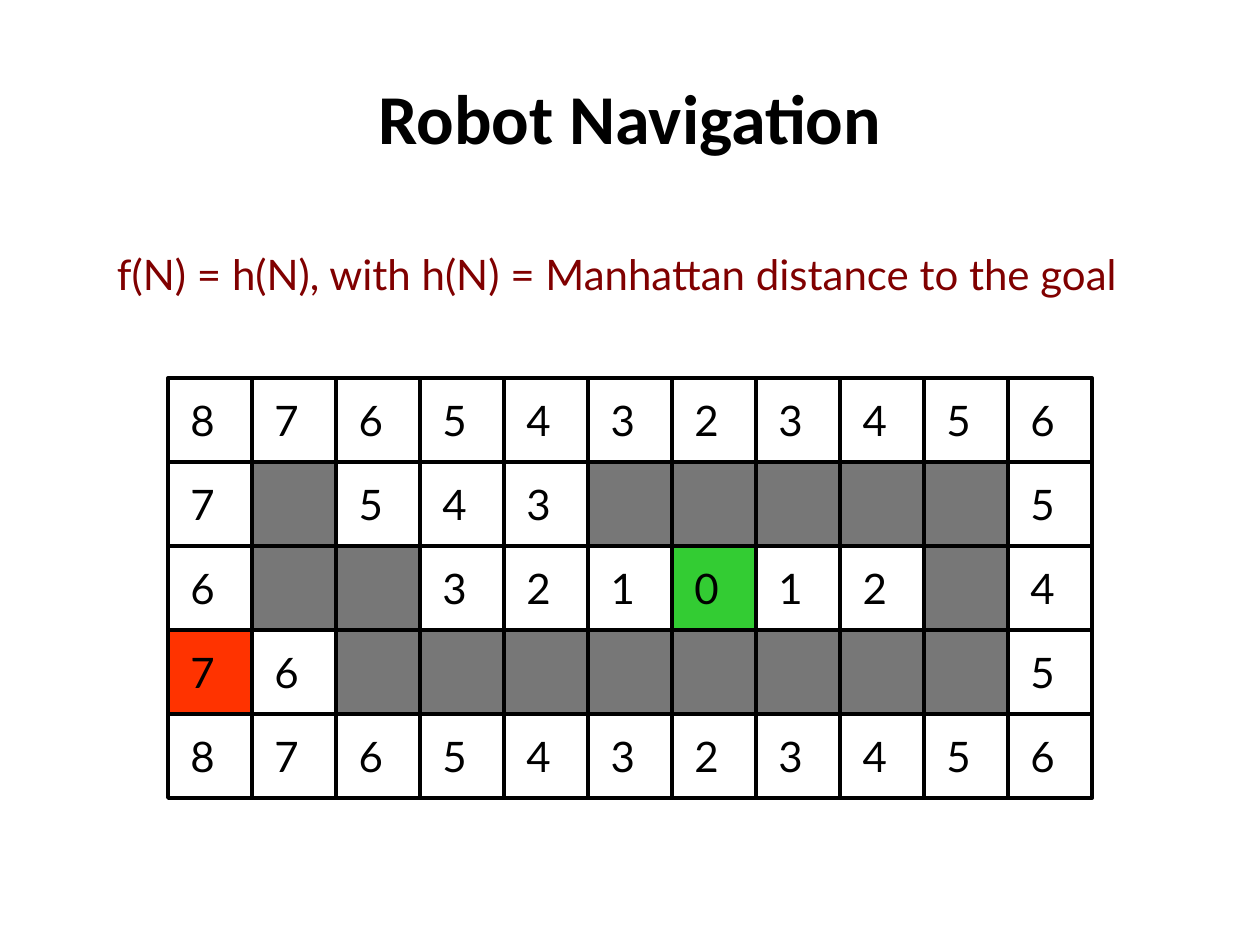
from lxml import etree
from pptx import Presentation
from pptx.dml.color import RGBColor
from pptx.enum.shapes import MSO_CONNECTOR, MSO_SHAPE
from pptx.enum.text import MSO_ANCHOR, MSO_AUTO_SIZE, PP_ALIGN
from pptx.oxml.ns import qn
from pptx.util import Inches, Pt

RECT = MSO_SHAPE.RECTANGLE
LINE = MSO_CONNECTOR.STRAIGHT
MIDDLE = MSO_ANCHOR.MIDDLE
CENTER = PP_ALIGN.CENTER
GROW = MSO_AUTO_SIZE.SHAPE_TO_FIT_TEXT

COLORS = {
    "ink": "000000",
    "rule": "800000",
    "wall": "777777",
    "start": "FF3300",
    "goal": "33CC33",
}
MAZE = [
    "...........",
    ".#...#####.",
    ".##...G..#.",
    "S.########.",
    "...........",
]
FILLS = {"#": "wall", "S": "start", "G": "goal"}


def color(name):
    """Return the named colour."""
    return RGBColor.from_string(COLORS[name])


def style(par, face, size, tint, bold=False):
    """Set the font of a paragraph."""
    font = par.font
    font.name, font.size, font.bold = face, Pt(size), bold
    font.color.rgb = color(tint)


def add_title(slide, text, left, top, width, height):
    """Place the title in its box."""
    title = slide.shapes.title
    title.left, title.top, title.width, title.height = left, top, width, height
    frame = title.text_frame
    frame.text = text
    frame.vertical_anchor = MIDDLE
    par = frame.paragraphs[0]
    par.alignment = CENTER
    style(par, "Calibri", 40, "ink", True)


def add_text(shapes, text, tint, left, top, width, height):
    """Place one line of text that does not wrap."""
    frame = shapes.add_textbox(left, top, width, height).text_frame
    frame.word_wrap = False
    frame.auto_size = GROW
    frame.text = text
    style(frame.paragraphs[0], "Lato", 24, tint)


def add_rect(shapes, tint, left, top, width, height):
    """Place an outlined rectangle, unfilled when it has no tint."""
    rect = shapes.add_shape(RECT, left, top, width, height)
    rect.shadow.inherit = False
    if tint:
        rect.fill.solid()
        rect.fill.fore_color.rgb = color(tint)
    else:
        rect.fill.background()
    rect.line.color.rgb = color("ink")
    rect.line.width = Pt(2.25)


def add_line(shapes, *ends):
    """Place a grid line between two points."""
    line = shapes.add_connector(LINE, *ends)
    line.line.color.rgb = color("ink")
    line.line.width = Pt(2.25)
    etree.SubElement(line._element.spPr, qn("a:effectLst"))


def add_maze(slide, left, top, cell):
    """Place the maze, with the Manhattan distance to the goal in free cells."""
    shapes = slide.shapes.add_group_shape().shapes
    rows, cols = len(MAZE), len(MAZE[0])
    width, height = cols * cell, rows * cell
    add_rect(shapes, None, left, top, width, height)
    for col in range(1, cols):
        x = left + col * cell
        add_line(shapes, x, top, x, top + height)
    for row in range(1, rows):
        y = top + row * cell
        add_line(shapes, left, y, left + width, y)

    cells = [(r, c, mark) for r, marks in enumerate(MAZE) for c, mark in enumerate(marks)]
    goal = next((r, c) for r, c, mark in cells if mark == "G")
    for row, col, mark in cells:
        if mark in FILLS:
            add_rect(shapes, FILLS[mark], left + col * cell, top + row * cell, cell, cell)
    pad = Inches(0.08)
    for row, col, mark in cells:
        if mark != "#":
            steps = abs(row - goal[0]) + abs(col - goal[1])
            add_text(shapes, str(steps), "ink", left + col * cell + pad,
                     top + row * cell + pad, Inches(0.38), Inches(0.5))


def main():
    """Build and save the slide."""
    deck = Presentation()
    deck.slide_width, deck.slide_height = Inches(10), Inches(7.5)
    slide = deck.slides.add_slide(deck.slide_layouts[5])
    add_title(slide, "Robot Navigation", Inches(0.5), Inches(0.3), Inches(9), Inches(1.25))
    add_maze(slide, Inches(4 / 3), Inches(3), Inches(2 / 3))
    add_text(slide.shapes, "f(N) = h(N), with h(N) = Manhattan distance to the goal", "rule",
             Inches(0.83), Inches(1.92), Inches(8.52), Inches(0.5))
    deck.save("out.pptx")


if __name__ == "__main__":
    main()
